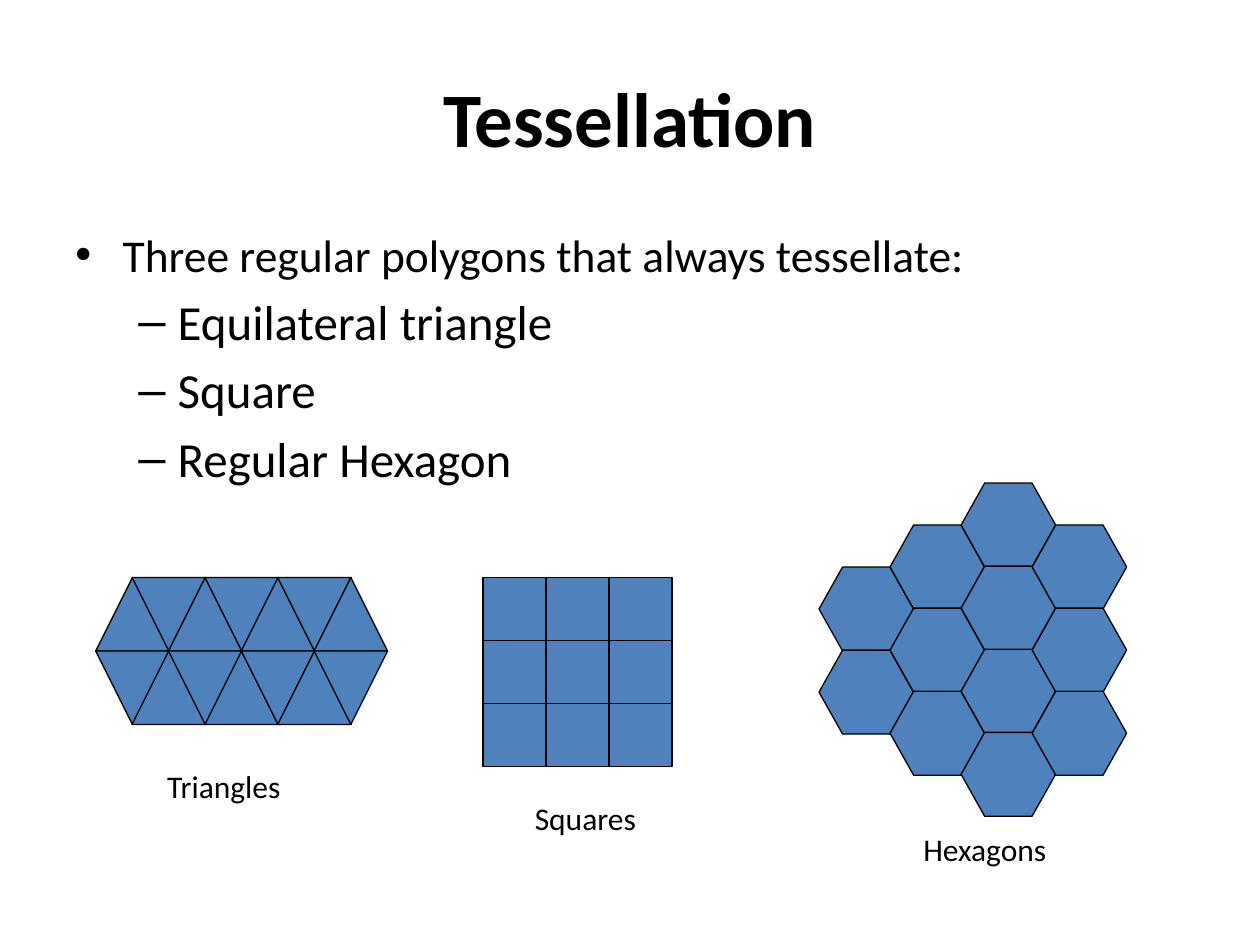
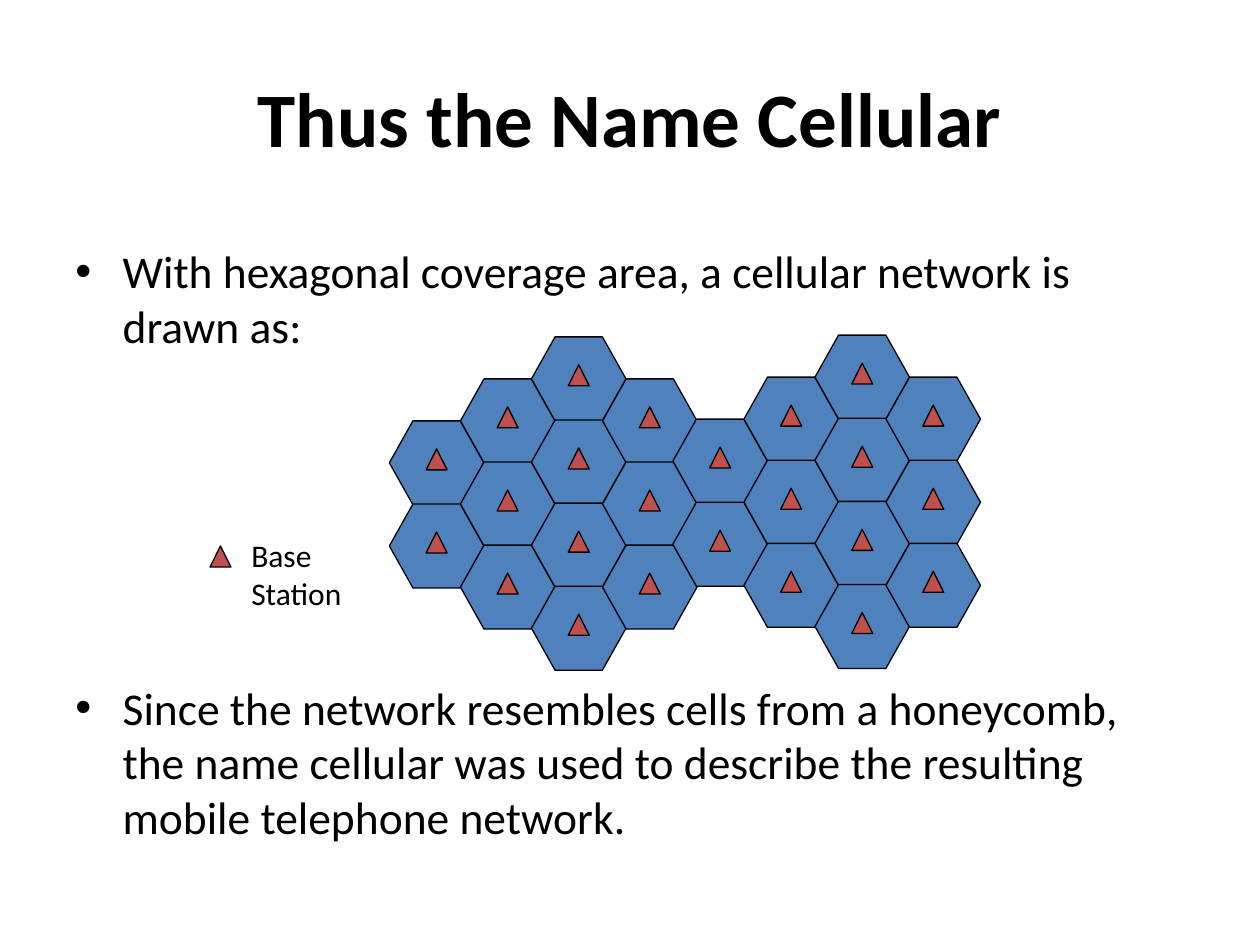
"""Build two slides on tessellation and the cellular network."""
from lxml import etree
from pptx import Presentation
from pptx.dml.color import RGBColor
from pptx.enum.shapes import MSO_SHAPE
from pptx.enum.text import MSO_ANCHOR, PP_ALIGN
from pptx.oxml.ns import qn
from pptx.util import Pt

TRIANGLE = MSO_SHAPE.ISOSCELES_TRIANGLE
HEXAGON = MSO_SHAPE.HEXAGON
RECTANGLE = MSO_SHAPE.RECTANGLE
MIDDLE = MSO_ANCHOR.MIDDLE
LEFT, CENTER = PP_ALIGN.LEFT, PP_ALIGN.CENTER

FONT, BLACK, BLUE, RED = "Calibri", "000000", "4F81BD", "C0504D"

HEX_W, HEX_H = 54, 48
HEX_COL_STEP, HEX_ROW_STEP = 40.6, 47.5
CELLS_PER_COLUMN = [2, 3, 4, 3]
STATION = 12
TRIANGLE_SIZE, TRIANGLE_STEP = 42, 20.8
SQUARE = 36
TILES_LEFT, SQUARES_LEFT, TILES_TOP = 54.7, 276, 330

BULLET = dict(size=26, bullet="•", left=27, hang=27, before=5.2)
DASH = dict(size=28, bullet="–", left=58.5, hang=22.5, before=5.6)
AFTER_DRAWING = {**BULLET, "before": 187}

SLIDES = [
    dict(title="Tessellation", body_top=126, body_height=347,
         body=[("Three regular polygons that always tessellate:", BULLET),
               ("Equilateral triangle", DASH),
               ("Square", DASH),
               ("Regular Hexagon", DASH)],
         clusters=[(468, 324)], has_stations=False,
         labels=[("Triangles", 88.5, 435, 88.5, 29),
                 ("Squares", 298.5, 453, 81.5, 29),
                 ("Hexagons", 520.5, 471, 96, 29)]),
    dict(title="Thus the Name Cellular", body_top=135.5, body_height=381,
         body=[("With hexagonal coverage area, a cellular network is drawn as:", BULLET),
               ("Since the network resembles cells from a honeycomb, the name cellular "
                "was used to describe the resulting mobile telephone network.",
                AFTER_DRAWING)],
         clusters=[(222.5, 240.5), (384.5, 239.5)], has_stations=True,
         labels=[("Base\nStation", 136.5, 303, 70.5, 50.5)]),
]


def write(tf, text, size=18, bold=False, align=LEFT, before=0, bullet=None, left=0, hang=0):
    """Write each line of text as a paragraph, after any text already there."""
    for line in text.split("\n"):
        p = tf.add_paragraph() if tf.text else tf.paragraphs[0]
        p.alignment, p.space_before = align, Pt(before)
        r = p.add_run()
        r.text = line
        r.font.name, r.font.size, r.font.bold = FONT, Pt(size), bold
        r.font.color.rgb = RGBColor.from_string(BLACK)
        if bullet:
            pPr = p._p.get_or_add_pPr()
            pPr.set("marL", str(Pt(left)))
            pPr.set("indent", str(-Pt(hang)))
            etree.SubElement(pPr, qn("a:buFont"), typeface="Arial")
            etree.SubElement(pPr, qn("a:buChar"), char=bullet)


def add_tile(slide, kind, x, y, w, h, color=BLUE):
    """Add a filled tile with a thin black outline."""
    s = slide.shapes.add_shape(kind, Pt(x), Pt(y), Pt(w), Pt(h))
    s.shadow.inherit = False
    s.fill.solid()
    s.fill.fore_color.rgb = RGBColor.from_string(color)
    s.line.color.rgb = RGBColor.from_string(BLACK)
    s.line.width = Pt(0.75)
    return s


prs = Presentation()
prs.slide_width, prs.slide_height = Pt(720), Pt(540)

for content in SLIDES:
    slide = prs.slides.add_slide(prs.slide_layouts[5])
    title = slide.shapes.title
    title.left, title.top, title.width, title.height = Pt(36), Pt(21.6), Pt(648), Pt(90)
    title.text_frame.vertical_anchor = MIDDLE
    write(title.text_frame, content["title"], size=44, bold=True, align=CENTER)

    body = slide.shapes.add_textbox(Pt(36), Pt(content["body_top"]),
                                    Pt(648), Pt(content["body_height"]))
    body.text_frame.word_wrap = True
    for text, style in content["body"]:
        write(body.text_frame, text, **style)

    for cluster_left, cluster_top in content["clusters"]:
        for col, cell_count in enumerate(CELLS_PER_COLUMN):
            x = cluster_left + HEX_COL_STEP * col
            column_top = cluster_top - HEX_H / 2 * (cell_count - CELLS_PER_COLUMN[0])
            for row in range(cell_count):
                y = column_top + HEX_ROW_STEP * row
                cell = add_tile(slide, HEXAGON, x, y, HEX_W, HEX_H)
                cell.adjustments[0] = 0.281
                if content["has_stations"]:
                    center_x, center_y = x + HEX_W / 2, y + HEX_H / 2
                    add_tile(slide, TRIANGLE, center_x - STATION / 2,
                             center_y - STATION * 2 / 3, STATION, STATION, RED)

    for text, x, y, w, h in content["labels"]:
        label = slide.shapes.add_textbox(Pt(x), Pt(y), Pt(w), Pt(h))
        label.text_frame.word_wrap = False
        write(label.text_frame, text)

tessellation, network = prs.slides

for row in range(2):
    for col in range(7):
        tile = add_tile(tessellation, TRIANGLE, TILES_LEFT + TRIANGLE_STEP * col,
                        TILES_TOP + TRIANGLE_SIZE * row, TRIANGLE_SIZE, TRIANGLE_SIZE)
        if (row + col) % 2:
            tile.rotation = 180

for row in range(3):
    for col in range(3):
        add_tile(tessellation, RECTANGLE, SQUARES_LEFT + SQUARE * col,
                 TILES_TOP + SQUARE * row, SQUARE, SQUARE)

legend_station = add_tile(network, TRIANGLE, 120, 312, STATION, STATION, RED)

prs.save("out.pptx")
